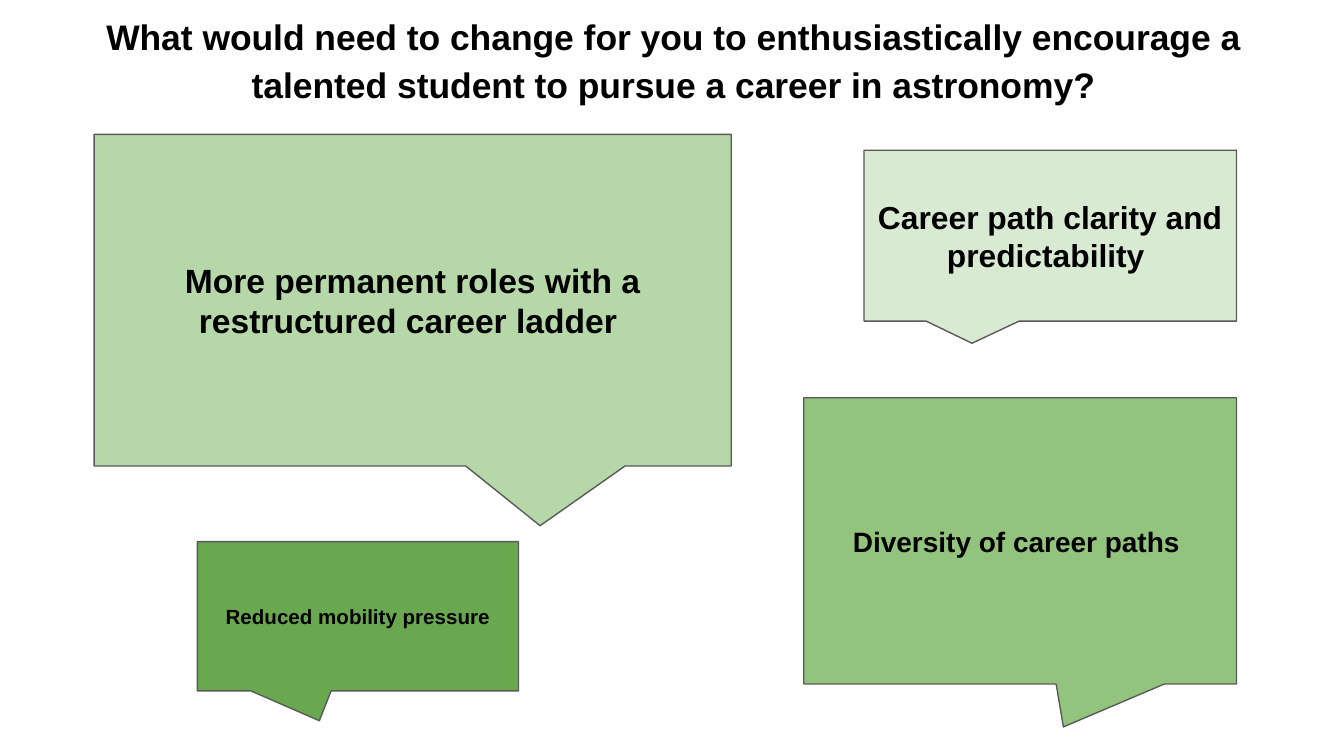
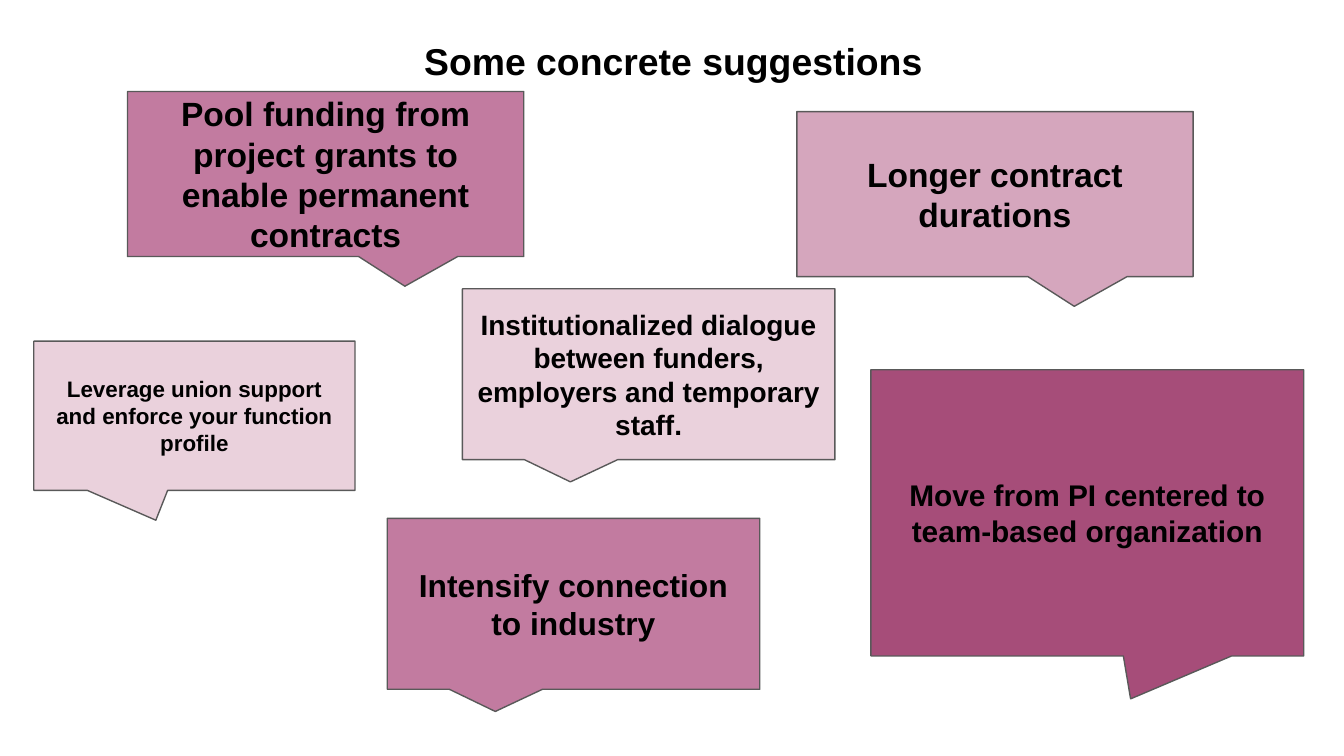
from pptx import Presentation
from pptx import util as u
from pptx.dml.color import RGBColor
from pptx.enum import shapes, text

FONT = "Arial"
BLACK, WHITE, OUTLINE = "000000", "FFFFFF", "595959"
INSET = u.Cm(0.25)

# Bubble styles: width and height in cm, then horizontal and vertical tail offset
HUGE = (12.04, 6.27, 0.2, 0.68)
BROAD = (7.49, 3.12, 0.2, 0.68)
MEDIUM = (7.04, 3.23, -0.21, 0.63)
TALL = (8.18, 5.41, 0.1, 0.65)
SMALL = (6.07, 2.82, -0.12, 0.7)

# Bubbles: style, left, top (cm), fill, font size, wording
CHANGES = [
    (HUGE, 1.78, 2.54, "B6D7A8", 18,
     "More permanent roles with a restructured career ladder "),
    (MEDIUM, 16.33, 2.84, "D9EAD3", 17, "Career path clarity and predictability "),
    (TALL, 15.19, 7.52, "93C47D", 15, "Diversity of career paths "),
    (SMALL, 3.73, 10.24, "6AA84F", 11, "Reduced mobility pressure"),
]
SUGGESTIONS = [
    (BROAD, 2.41, 1.73, "C27BA0", 18,
     "Pool funding from project grants to enable permanent contracts"),
    (MEDIUM, 7.32, 9.8, "C27BA0", 17, "Intensify connection to industry"),
    (TALL, 16.46, 6.99, "A64D79", 16,
     "Move from PI centered to team-based organization"),
    (SMALL, 0.64, 6.45, "EAD1DC", 12,
     "Leverage union support and enforce your function profile"),
    (BROAD, 15.06, 2.11, "D5A6BD", 18, "Longer contract durations"),
    (MEDIUM, 8.74, 5.46, "EAD1DC", 15,
     "Institutionalized dialogue between funders, employers and temporary staff."),
]


def color(value):
    return RGBColor.from_string(value)


def write_centered(shape, wording, size):
    """Fill a shape with one bold, centred paragraph and return it."""
    frame = shape.text_frame
    frame.word_wrap = True
    frame.auto_size = text.MSO_AUTO_SIZE.NONE
    frame.vertical_anchor = text.MSO_ANCHOR.MIDDLE
    frame.margin_left = frame.margin_right = INSET
    frame.margin_top = frame.margin_bottom = INSET
    paragraph = frame.paragraphs[0]
    paragraph.alignment = text.PP_ALIGN.CENTER
    run = paragraph.add_run()
    run.text = wording
    run.font.name = FONT
    run.font.size = u.Pt(size)
    run.font.bold = True
    run.font.color.rgb = color(BLACK)
    return paragraph


def add_title(slide, wording, size, space_before):
    title = slide.shapes.title
    title.left, title.top = u.Cm(0.64), u.Cm(0.28)
    title.width, title.height = u.Cm(24.18), u.Cm(1.6)
    paragraph = write_centered(title, wording, size)
    paragraph.line_spacing = 1.15
    paragraph.space_before = u.Pt(space_before)
    paragraph.space_after = u.Pt(8)


def add_bubble(slide, style, left, top, fill, size, wording):
    width, height, tail_x, tail_y = style
    bubble = slide.shapes.add_shape(
        shapes.MSO_SHAPE.ROUNDED_RECTANGULAR_CALLOUT,
        u.Cm(left), u.Cm(top), u.Cm(width), u.Cm(height))
    # The third adjustment squares off the corners
    for index, value in enumerate((tail_x, tail_y, 0)):
        bubble.adjustments[index] = value
    bubble.shadow.inherit = False
    bubble.fill.solid()
    bubble.fill.fore_color.rgb = color(fill)
    bubble.line.color.rgb = color(OUTLINE)
    bubble.line.width = u.Pt(0.75)
    write_centered(bubble, wording, size)


def add_bubble_slide(presentation, title, title_size, space_before, bubbles):
    slide = presentation.slides.add_slide(presentation.slide_layouts[5])
    slide.background.fill.solid()
    slide.background.fill.fore_color.rgb = color(WHITE)
    add_title(slide, title, title_size, space_before)
    for bubble in bubbles:
        add_bubble(slide, *bubble)


def main():
    presentation = Presentation()
    presentation.slide_width = u.Cm(25.4)
    presentation.slide_height = u.Cm(14.29)
    add_bubble_slide(
        presentation,
        "What would need to change for you to enthusiastically encourage "
        "a talented student to pursue a career in astronomy?",
        19, 0, CHANGES)
    add_bubble_slide(
        presentation, "Some concrete suggestions", 20, 8, SUGGESTIONS)
    presentation.save("out.pptx")


if __name__ == "__main__":
    main()
